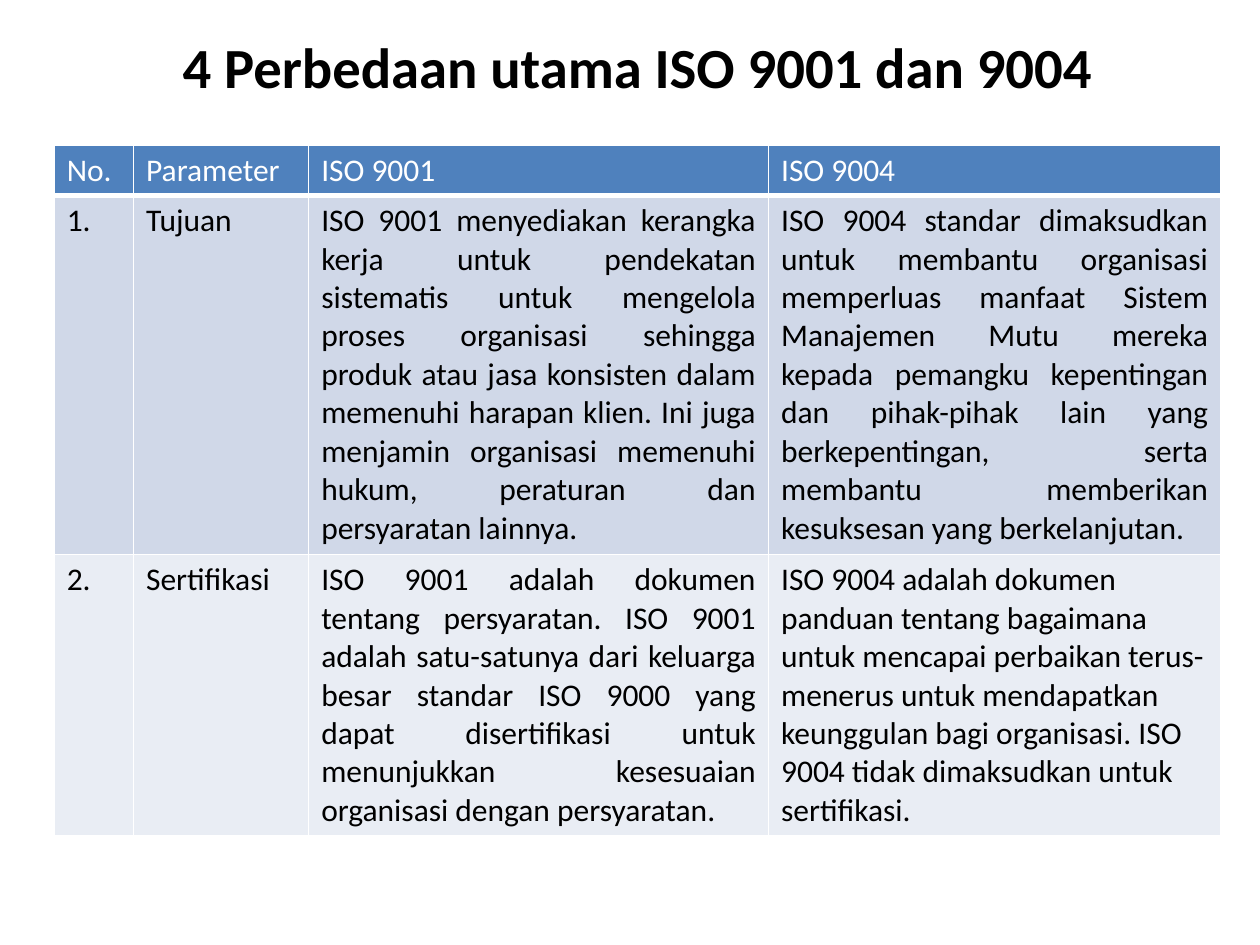
from lxml.etree import SubElement
from pptx import Presentation
from pptx.dml.color import RGBColor
from pptx.enum.text import MSO_ANCHOR, PP_ALIGN as AL
from pptx.oxml.ns import qn
from pptx.util import Inches, Pt

# Content
TITLE = "4 Perbedaan utama ISO 9001 dan 9004"
ROWS = [
    ("No.", "Parameter", "ISO 9001", "ISO 9004"),
    ("1.", "Tujuan",
     "ISO 9001 menyediakan kerangka kerja untuk pendekatan sistematis untuk "
     "mengelola proses organisasi sehingga produk atau jasa konsisten dalam "
     "memenuhi harapan klien. Ini juga menjamin organisasi memenuhi hukum, "
     "peraturan dan persyaratan lainnya.",
     "ISO 9004 standar dimaksudkan untuk membantu organisasi memperluas manfaat "
     "Sistem Manajemen Mutu mereka kepada pemangku kepentingan dan pihak-pihak "
     "lain yang berkepentingan, serta membantu memberikan kesuksesan yang "
     "berkelanjutan."),
    ("2.", "Sertifikasi",
     "ISO 9001 adalah dokumen tentang persyaratan. ISO 9001 adalah satu-satunya "
     "dari keluarga besar standar ISO 9000 yang dapat disertifikasi untuk "
     "menunjukkan kesesuaian organisasi dengan persyaratan.",
     "ISO 9004 adalah dokumen panduan tentang bagaimana untuk mencapai perbaikan "
     "terus-menerus untuk mendapatkan keunggulan bagi organisasi. ISO 9004 tidak "
     "dimaksudkan untuk sertifikasi."),
]
JUSTIFIED = {(1, 2), (1, 3), (2, 2)}

# Format
COL_WIDTHS = [0.63, 1.39, 3.65, 3.59]
ROW_HEIGHTS = [0.4, 2.85, 2.23]
ROW_FILLS = ["4F81BD", "D0D8E8", "E9EDF4"]
WHITE, BLACK = "FFFFFF", "000000"
TITLE_FONT = {"name": "Calibri", "size": Pt(32.4), "bold": True}
CELL_FONT = {"name": "Calibri", "size": Pt(18), "bold": False}


def rgb(value):
    return RGBColor.from_string(value)


def write(tf, text, font, color, align):
    p = tf.paragraphs[0]
    p.alignment = align
    r = p.add_run()
    r.text = text
    for name, value in font.items():
        setattr(r.font, name, value)
    r.font.color.rgb = rgb(color)


def add_borders(cell, widths):
    tc_pr = cell._tc.get_or_add_tcPr()
    for index, (side, width) in enumerate(widths.items()):
        ln = tc_pr.makeelement(qn(f"a:ln{side}"), {"w": str(Pt(width))})
        tc_pr.insert(index, ln)  # borders come before the fill
        fill = SubElement(ln, qn("a:solidFill"))
        SubElement(fill, qn("a:srgbClr"), val=WHITE)


prs = Presentation()
prs.slide_width, prs.slide_height = Inches(10), Inches(7.5)
s = prs.slides.add_slide(prs.slide_layouts[6])

# Title
title = s.shapes.add_textbox(Inches(0.61), Inches(0.21), Inches(8.9), Inches(0.63))
tf = title.text_frame
tf.word_wrap = True
tf.vertical_anchor = MSO_ANCHOR.MIDDLE
write(tf, TITLE, TITLE_FONT, BLACK, AL.CENTER)

# Comparison table
table = s.shapes.add_table(
    len(ROWS), len(COL_WIDTHS), Inches(0.43), Inches(1.15),
    Inches(sum(COL_WIDTHS)), Inches(sum(ROW_HEIGHTS))).table
for col, width in zip(table.columns, COL_WIDTHS):
    col.width = Inches(width)
for row, height in zip(table.rows, ROW_HEIGHTS):
    row.height = Inches(height)

for i, texts in enumerate(ROWS):
    for j, text in enumerate(texts):
        cell = table.cell(i, j)
        cell.fill.solid()
        cell.fill.fore_color.rgb = rgb(ROW_FILLS[i])
        add_borders(cell, {"L": 1, "R": 1, "T": 1, "B": 1 if i else 3})
        write(cell.text_frame, text, CELL_FONT, BLACK if i else WHITE,
              AL.JUSTIFY if (i, j) in JUSTIFIED else AL.LEFT)

prs.save("out.pptx")
